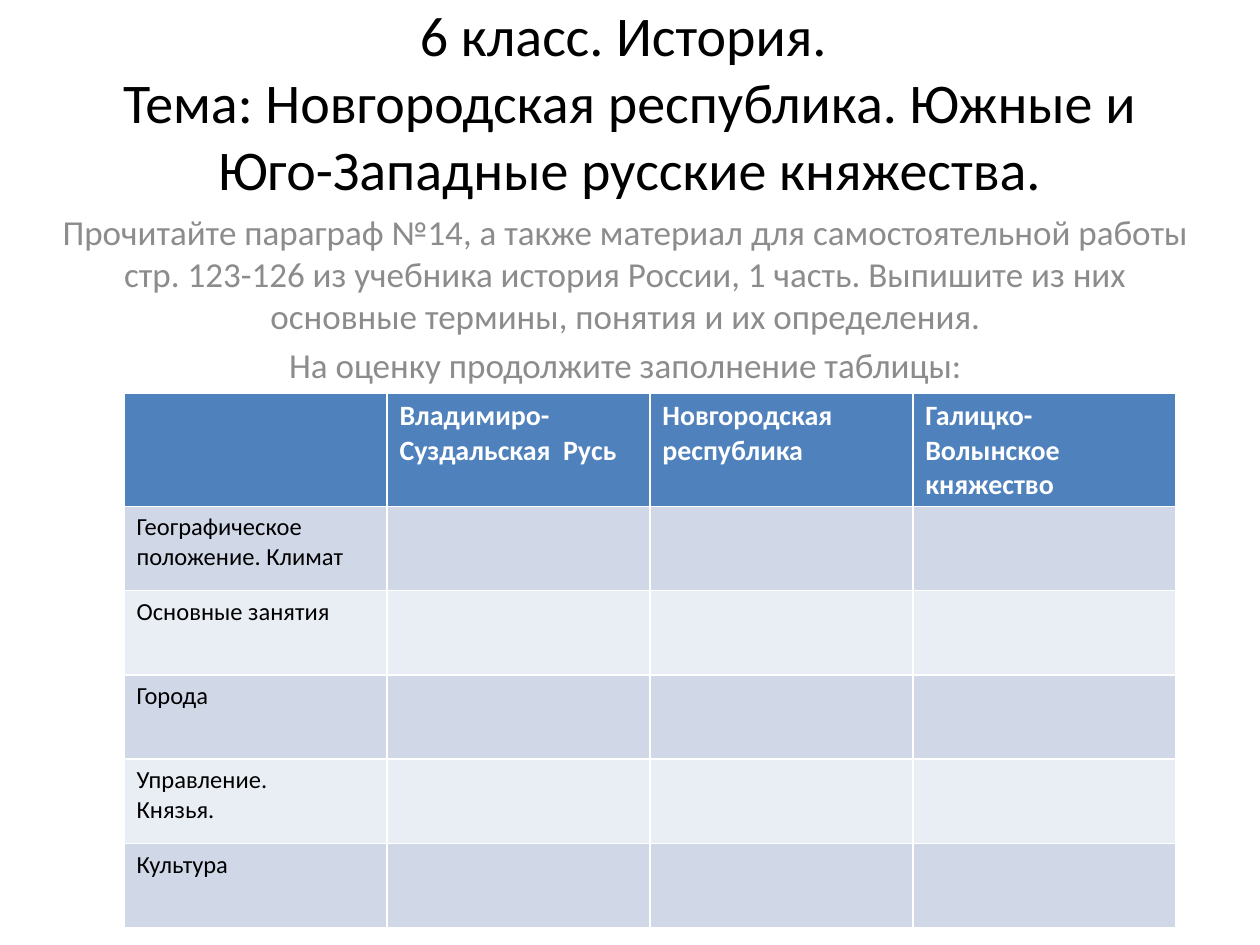
from pptx import Presentation
from pptx.dml.color import RGBColor
from pptx.enum.text import MSO_ANCHOR, PP_ALIGN
from pptx.util import Cm, Pt

FONT = "Calibri"
HEADER_FILL = "4F81BD"
BAND_FILLS = ("D0D8E8", "E9EDF4")

TITLE = ("6 класс. История. \v"
         "Тема: Новгородская республика. Южные и Юго-Западные русские княжества.")
TASKS = [
    "Прочитайте параграф №14, а также материал для самостоятельной работы "
    "стр. 123-126 из учебника история России, 1 часть. "
    "Выпишите из них основные термины, понятия и их определения.",
    "На оценку продолжите заполнение таблицы:",
]
LANDS = ["", "Владимиро-Суздальская  Русь", "Новгородская республика",
         "Галицко- Волынское княжество"]
TOPICS = ["Географическое положение. Климат", "Основные занятия", "Города",
          "Управление.\nКнязья.", "Культура"]


def color(hex_code):
    """Turn a hex string into a colour."""
    return RGBColor.from_string(hex_code)


def style_runs(frame, size, hex_code, bold=False):
    """Give every run of a text frame the same font."""
    for paragraph in frame.paragraphs:
        for run in paragraph.runs:
            run.font.name = FONT
            run.font.size = Pt(size)
            run.font.bold = bold
            run.font.color.rgb = color(hex_code)


def add_centered_text(slide, box, text, size, hex_code):
    """Add a wrapped, centred text box and return its frame."""
    frame = slide.shapes.add_textbox(*map(Cm, box)).text_frame
    frame.word_wrap = True
    frame.text = text
    for paragraph in frame.paragraphs:
        paragraph.alignment = PP_ALIGN.CENTER
    style_runs(frame, size, hex_code)
    return frame


def fill_cell(cell, text, fill, size, hex_code, bold=False):
    """Write one table cell with its background."""
    cell.fill.solid()
    cell.fill.fore_color.rgb = color(fill)
    cell.text_frame.text = text
    style_runs(cell.text_frame, size, hex_code, bold)


def add_comparison_table(slide, box):
    """Add the table that compares the lands by topic."""
    table = slide.shapes.add_table(
        len(TOPICS) + 1, len(LANDS), *map(Cm, box)).table
    for column, land in enumerate(LANDS):
        fill_cell(table.cell(0, column), land, HEADER_FILL, 16, "FFFFFF", True)
    for row, topic in enumerate(TOPICS, start=1):
        band = BAND_FILLS[(row - 1) % 2]
        for column in range(len(LANDS)):
            text = topic if column == 0 else ""
            fill_cell(table.cell(row, column), text, band, 14, "000000")


def main():
    """Build and save the lesson slide."""
    deck = Presentation()
    deck.slide_width, deck.slide_height = Cm(25.4), Cm(19.05)
    slide = deck.slides.add_slide(deck.slide_layouts[6])

    title = add_centered_text(slide, (1.9, 0.53, 21.6, 4.4), TITLE, 32, "000000")
    title.vertical_anchor = MSO_ANCHOR.MIDDLE
    title.margin_bottom = Cm(1.5)

    tasks = add_centered_text(
        slide, (0.71, 4.11, 23.8, 13.4), "\n".join(TASKS), 20, "8C8C8C")
    for paragraph in tasks.paragraphs:
        paragraph.space_before = Pt(4)

    add_comparison_table(slide, (2.5, 7.92, 21.2, 10.2))
    deck.save("out.pptx")


if __name__ == "__main__":
    main()
